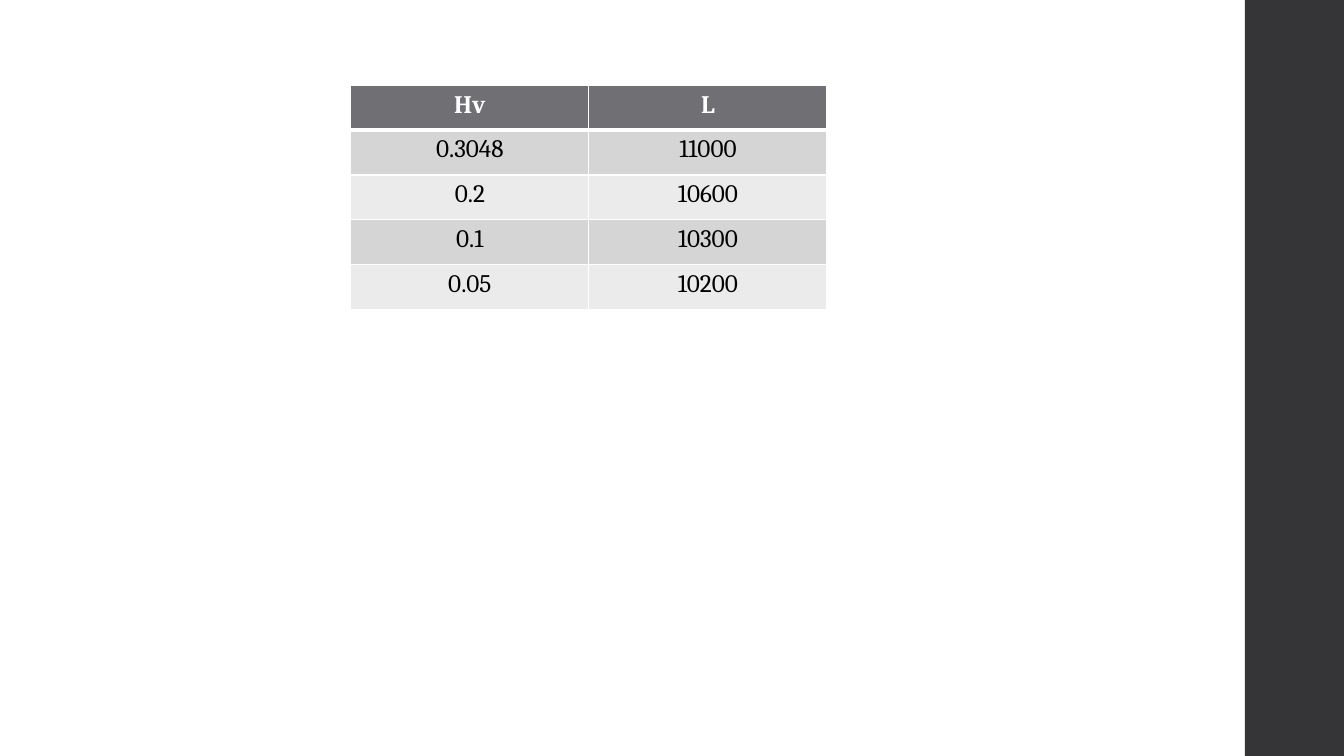
import pptx
import pptx.dml.color
import pptx.enum.shapes
import pptx.enum.text
import pptx.oxml.ns
import pptx.util
from lxml import etree
from pptx.util import Cm

# Content
HEADINGS = ("Hv", "L")
READINGS = [
    ("0.3048", "11000"),
    ("0.2", "10600"),
    ("0.1", "10300"),
    ("0.05", "10200"),
]

# Style
COLORS = {
    "side_band": "353537",
    "heading": "6F6F74",
    "odd_row": "D5D5D6",
    "even_row": "EBEBEB",
    "border": "FFFFFF",
    "heading_text": "FFFFFF",
    "reading_text": "000000",
}
FONT = "Cambria"
TEXT_SIZE = pptx.util.Pt(18)
THIN, THICK = pptx.util.Pt(1), pptx.util.Pt(3)

# Layout
SLIDE_WIDTH, SLIDE_HEIGHT = Cm(33.87), Cm(19.05)
BAND_LEFT, BAND_WIDTH = Cm(31.37), Cm(2.54)
TABLE_LEFT, TABLE_TOP = Cm(8.84), Cm(2.15)
COLUMN_WIDTH, ROW_HEIGHT = Cm(6), Cm(1.13)


def rgb(name):
    return pptx.dml.color.RGBColor.from_string(COLORS[name])


def add_border(cell, side, width):
    qn = pptx.oxml.ns.qn
    properties = cell._tc.get_or_add_tcPr()
    line = etree.SubElement(properties, qn(f"a:ln{side}"), w=str(width))
    solid = etree.SubElement(line, qn("a:solidFill"))
    etree.SubElement(solid, qn("a:srgbClr"), val=COLORS["border"])


def style_cell(cell, text, row):
    is_heading = row == 0
    widths = {
        "L": THIN,
        "R": THIN,
        "T": THICK if row == 1 else THIN,
        "B": THICK if is_heading else THIN,
    }
    for side, width in widths.items():
        add_border(cell, side, width)

    cell.fill.solid()
    fill = "heading" if is_heading else "odd_row" if row % 2 else "even_row"
    cell.fill.fore_color.rgb = rgb(fill)

    paragraph = cell.text_frame.paragraphs[0]
    paragraph.alignment = pptx.enum.text.PP_ALIGN.CENTER
    run = paragraph.add_run()
    run.text = text
    run.font.name = FONT
    run.font.size = TEXT_SIZE
    run.font.bold = is_heading
    run.font.color.rgb = rgb("heading_text" if is_heading else "reading_text")


def main():
    deck = pptx.Presentation()
    deck.slide_width, deck.slide_height = SLIDE_WIDTH, SLIDE_HEIGHT
    slide = deck.slides.add_slide(deck.slide_layouts[6])

    # Dark band on the right
    side_band = slide.shapes.add_shape(
        pptx.enum.shapes.MSO_SHAPE.RECTANGLE, BAND_LEFT, 0, BAND_WIDTH, SLIDE_HEIGHT)
    side_band.shadow.inherit = False
    side_band.fill.solid()
    side_band.fill.fore_color.rgb = rgb("side_band")
    side_band.line.fill.background()

    # Table of readings
    rows = [HEADINGS, *READINGS]
    readings = slide.shapes.add_table(
        len(rows), len(HEADINGS), TABLE_LEFT, TABLE_TOP,
        COLUMN_WIDTH * len(HEADINGS), ROW_HEIGHT * len(rows)).table
    for column in readings.columns:
        column.width = COLUMN_WIDTH
    for row, values in enumerate(rows):
        readings.rows[row].height = ROW_HEIGHT
        for column, value in enumerate(values):
            style_cell(readings.cell(row, column), value, row)

    deck.save("out.pptx")


if __name__ == "__main__":
    main()
